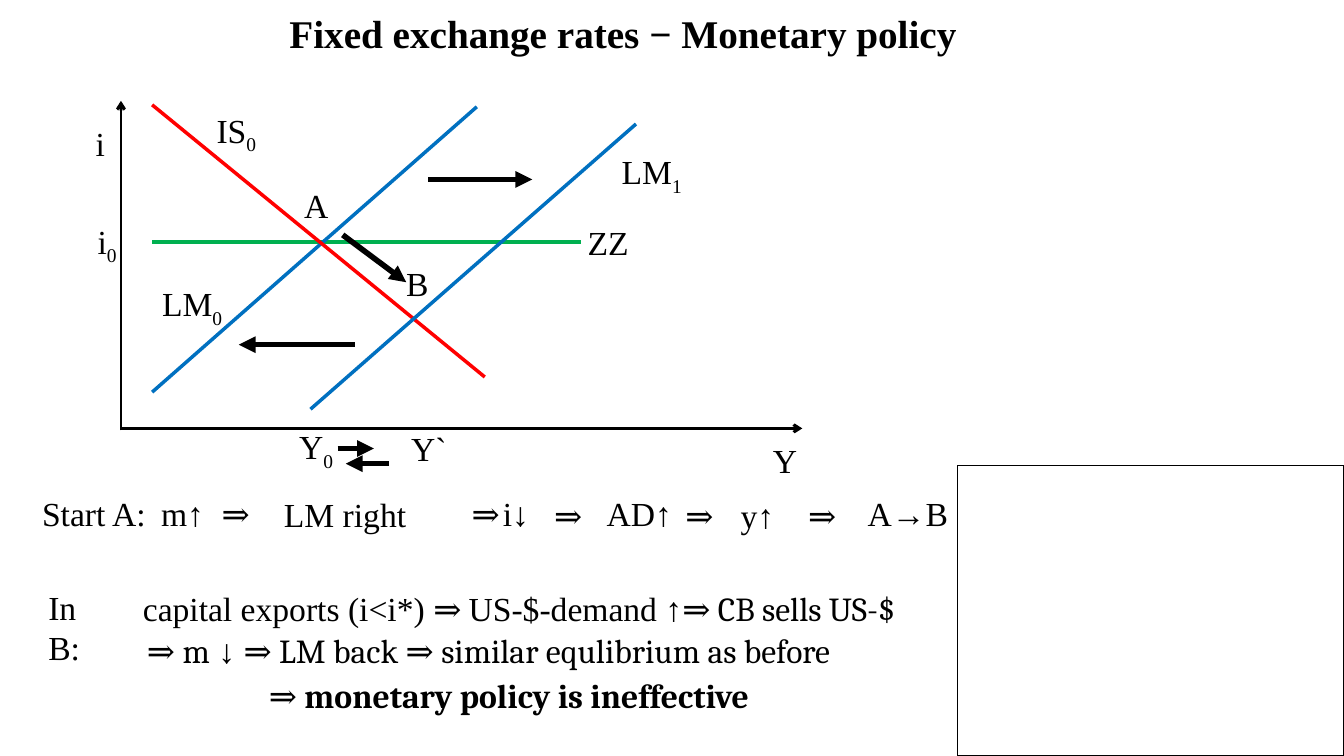
import pptx
import pptx.dml.color
import pptx.enum.shapes
import pptx.enum.text
import pptx.oxml.ns
import pptx.util
from lxml import etree

Pt = pptx.util.Pt
COLORS = {"black": "000000", "green": "00B050", "blue": "0070C0", "red": "FF0000"}
TIMES = "Times New Roman"
CAMBRIA = "Cambria"

presentation = pptx.Presentation()
presentation.slide_width = Pt(960)
presentation.slide_height = Pt(540)
slide = presentation.slides.add_slide(presentation.slide_layouts[5])


def add_line(start, end, color, width, head=None):
    """Draw a straight line, with an arrowhead of type head at its end if given."""
    line = slide.shapes.add_connector(
        pptx.enum.shapes.MSO_CONNECTOR.STRAIGHT, *[Pt(value) for value in start + end])
    line.line.color.rgb = pptx.dml.color.RGBColor.from_string(COLORS[color])
    line.line.width = Pt(width)
    if head:
        tail_end = etree.SubElement(line.line._get_or_add_ln(), pptx.oxml.ns.qn("a:tailEnd"))
        tail_end.set("type", head)
    etree.SubElement(line._element.spPr, pptx.oxml.ns.qn("a:effectLst"))


def add_text(left, top, width, *runs, height=36):
    """Add a text box; each run is (text, font) plus an optional "bold" or "sub"."""
    box = slide.shapes.add_textbox(Pt(left), Pt(top), Pt(width), Pt(height))
    box.text_frame.word_wrap = True
    for text, font, *style in runs:
        run = box.text_frame.paragraphs[0].add_run()
        run.text = text
        run.font.name = font
        run.font.size = Pt(24)
        run.font.color.rgb = pptx.dml.color.RGBColor.from_string(COLORS["black"])
        if "bold" in style:
            run.font.bold = True
        if "sub" in style:
            run.font._element.set("baseline", "-25000")


# Title
title = slide.shapes.title
title.left, title.top, title.width, title.height = Pt(179.3), Pt(2.9), Pt(531.4), Pt(41)
title.text_frame.auto_size = pptx.enum.text.MSO_AUTO_SIZE.NONE
title.text_frame.vertical_anchor = pptx.enum.text.MSO_ANCHOR.MIDDLE
title_paragraph = title.text_frame.paragraphs[0]
title_paragraph.alignment = pptx.enum.text.PP_ALIGN.CENTER
title_run = title_paragraph.add_run()
title_run.text = "Fixed exchange rates − Monetary policy"
title_run.font.name = TIMES
title_run.font.size = Pt(28)
title_run.font.bold = True
title_run.font.color.rgb = pptx.dml.color.RGBColor.from_string(COLORS["black"])

# Axes
add_line((86.4, 307.4), (86.4, 72), "black", 2, "arrow")
add_line((86.4, 306), (573.1, 306), "black", 2, "arrow")

# Curves ZZ, LM0, IS0 and LM1
for start, end, color in [
    ((108.7, 172.8), (414.7, 172.8), "green"),
    ((108.7, 280.1), (340.6, 76.3), "blue"),
    ((108.7, 74.9), (346.3, 269.3), "red"),
    ((221.8, 292.3), (454.3, 88.6), "blue"),
]:
    add_line(start, end, color, 2.5)

# Shifts of the curves and of output
for start, end in [
    ((306, 128.2), (380.2, 128.2)),
    ((244.8, 167.8), (290.2, 201.6)),
    ((253.4, 246.2), (170.6, 246.2)),
    ((241.2, 320.4), (267.1, 320.4)),
    ((277.9, 331.2), (247, 331.2)),
]:
    add_line(start, end, "black", 4, "triangle")

# Labels in the diagram
for left, top, width, label, subscript in [
    (61.2, 84.2, 24, "i", ""),
    (545, 311, 36, "Y", ""),
    (62.6, 154.1, 32.4, "i", "0"),
    (206.6, 301, 41, "Y", "0"),
    (286.6, 302.4, 43.9, "Y`", ""),
    (147.6, 74.9, 49.7, "IS", "0"),
    (437, 104.4, 71.3, "LM", "1"),
    (108.7, 198.7, 57.6, "LM", "0"),
    (412.6, 154.8, 49.7, "ZZ", ""),
    (210.2, 128.2, 33.8, "A", ""),
    (283, 184.3, 33.1, "B", ""),
]:
    runs = [(label, TIMES)]
    if subscript:
        runs.append((subscript, TIMES, "sub"))
    add_text(left, top, width, *runs)

# Chain of effects from A to B
for left, top, width, step in [
    (23, 348.5, 96.5, "Start A:"),
    (108, 348.5, 62.6, "m↑"),
    (195.8, 349.2, 163.4, "LM right"),
    (352.1, 348.5, 51.1, "i↓"),
    (426.2, 348.5, 71.3, "AD↑"),
    (522, 349.9, 59.8, "y↑"),
    (612.7, 348.5, 80.6, "A→B"),
]:
    add_text(left, top, width, (step, TIMES))
for left, top in [(151.2, 348.5), (329.8, 348.5), (388.8, 349.9),
                  (482.4, 349.9), (570.2, 349.9), (302.4, 416.2)]:
    add_text(left, top, 42.5, ("⇒", CAMBRIA))

# Adjustment in B
add_text(27.4, 415.4, 59.8, ("In B:", TIMES), height=65.5)
add_text(95, 416.2, 221, ("capital exports (i<i*)", TIMES))
add_text(327.6, 416.2, 411.1, ("US-$-demand ↑", TIMES), ("⇒ CB sells US-$", CAMBRIA))
add_text(97.9, 446.4, 560.9, ("⇒ m", CAMBRIA), (" ↓ ", TIMES),
         ("⇒ LM back ⇒ similar equlibrium as before", CAMBRIA))
add_text(185, 478.8, 411.1, ("⇒ ", CAMBRIA),
         ("monetary policy is ineffective", CAMBRIA, "bold"))

# Empty frame in the corner
frame = slide.shapes.add_shape(
    pptx.enum.shapes.MSO_SHAPE.RECTANGLE, Pt(684), Pt(332.6), Pt(276), Pt(207.4))
frame.shadow.inherit = False
frame.fill.background()
frame.line.color.rgb = pptx.dml.color.RGBColor.from_string(COLORS["black"])
frame.line.width = Pt(1)

presentation.save("out.pptx")
